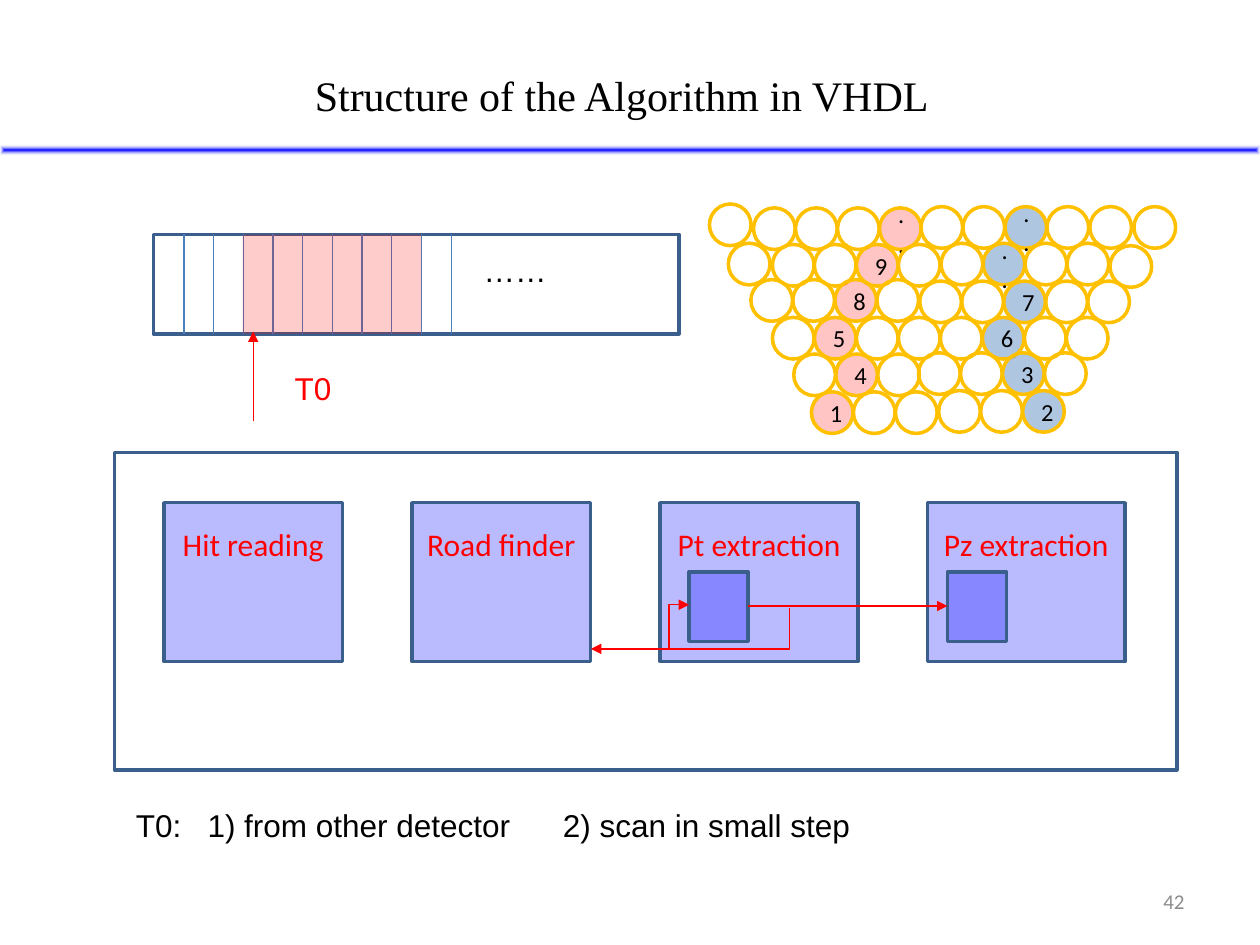
from lxml.etree import SubElement
from pptx import Presentation
from pptx.dml.color import RGBColor
from pptx.enum.shapes import MSO_CONNECTOR, MSO_SHAPE
from pptx.enum.text import MSO_ANCHOR, PP_ALIGN
from pptx.oxml import parse_xml
from pptx.oxml.ns import nsdecls, qn
from pptx.util import Pt

BLACK = RGBColor(0, 0, 0)
RED = RGBColor(0xFF, 0, 0)
BLUE = RGBColor(0, 0, 0xFF)
STEEL = RGBColor(0x4F, 0x81, 0xBD)
FRAME = RGBColor(0x3A, 0x5F, 0x8C)
DIVIDER = RGBColor(0x4B, 0x7E, 0xBC)
GOLD = RGBColor(0xFF, 0xC0, 0)
GREY = RGBColor(0x8C, 0x8C, 0x8C)

# text, left, top, width, height, font, size, colour
LABELS = [
    ("Structure of the Algorithm in VHDL", 172.8, 36, 380, 36, "Times New Roman", 24, BLACK),
    ("T0", 161.3, 207.4, 44, 29, "Arial", 18, RED),
    ("……", 269.3, 139.7, 60, 29, "Arial", 18, BLACK),
    ("T0:\t1) from other detector\t2) scan in small step", 70.6, 457.2, 460, 29, "Arial", 18, BLACK),
]
NOTE_TABS = (40.9, 244)
PAGE_NUMBER = ("42", 516.2, 500.4, 167.8, 28.8, "Calibri", 12, GREY)

# name, left, width
STAGES = [
    ("Hit reading", 93.6, 102.2),
    ("Road finder", 235.4, 102.2),
    ("Pt extraction", 377.3, 113),
    ("Pz extraction", 529.9, 113),
]
STAGE_TOP, STAGE_HEIGHT = 287.3, 90.7
INNER_LEFTS = (393.8, 541.4)

BUFFER = (87.8, 133.9, 300.2, 56.9)
DIVIDER_FIRST, DIVIDER_STEP, DIVIDER_COUNT = 105.1, 16.97, 10
WINDOW = (138.6, 133.9, 102.2, 56.9)

# Runs of straw tubes: left, top, cells. "-" is empty, r and b mark the two tracks.
TUBE_RUNS = [
    (405.4, 116.6, "-"), (430.6, 118.8, "- - - r.."),
    (526.3, 118.1, "- - b.. -"), (622.8, 118.1, "-"), (648, 118.1, "-"),
    (416.2, 139, "-"), (441.4, 139.7, "- - r9 -"),
    (537.8, 139, "- b.. - -"), (634.3, 140.4, "-"),
    (429.1, 159.8, "- - r8 -"), (525.6, 160.6, "- - b7 - -"),
    (441.4, 181.4, "- r5 - - - b6 - -"),
    (453.6, 202.3, "- r4 -"), (524.9, 201.6, "- - b3 -"),
    (463.7, 223.9, "r1 - -"), (536.4, 223.2, "- - b2"),
]
TUBE_FILLS = {"-": (None, None), "r": (RED, 23), "b": (STEEL, 45)}
TUBE_SIZE, TUBE_PITCH = 23.8, 24


def write(shape, text, font, size, colour, align=PP_ALIGN.LEFT):
    frame = shape.text_frame
    frame.word_wrap = True
    frame.text = text
    para = frame.paragraphs[0]
    para.alignment = align
    para.font.name = font
    para.font.size = Pt(size)
    for span in para.runs:
        span.font.name = font
        span.font.size = Pt(size)
        span.font.color.rgb = colour
    return frame


def add_label(page, text, left, top, width, height, *style):
    box = page.shapes.add_textbox(Pt(left), Pt(top), Pt(width), Pt(height))
    return write(box, text, *style)


def add_figure(page, kind, area, fill=None, opacity=None, line=None):
    """Add a preset shape; opacity is a percentage."""
    shape = page.shapes.add_shape(kind, *(Pt(length) for length in area))
    shape.shadow.inherit = False
    if fill is None:
        shape.fill.background()
    else:
        shape.fill.solid()
        shape.fill.fore_color.rgb = fill
        colour = shape.fill._xPr.find(qn("a:solidFill"))[0]
        SubElement(colour, qn("a:alpha")).set("val", str(opacity * 1000))
    if line is None:
        shape.line.fill.background()
    else:
        shape.line.color.rgb = line
        shape.line.width = Pt(2)
    return shape


def add_line(page, start, end, colour, arrow=False, bend=None):
    """Add a line; bend places the elbow, in thousandths of a percent of its width."""
    kind = MSO_CONNECTOR.STRAIGHT if bend is None else MSO_CONNECTOR.ELBOW
    line = page.shapes.add_connector(kind, *(Pt(length) for length in start + end))
    line.line.color.rgb = colour
    line.line.width = Pt(0.75)
    properties = line._element.spPr
    if arrow:
        SubElement(line.line._get_or_add_ln(), qn("a:tailEnd")).set("type", "triangle")
    if bend is not None:
        values = properties.find(qn("a:prstGeom")).find(qn("a:avLst"))
        guide = SubElement(values, qn("a:gd"))
        guide.set("name", "adj1")
        guide.set("fmla", f"val {bend}")
    SubElement(properties, qn("a:effectLst"))


def add_title_rule(page):
    rule = add_figure(page, MSO_SHAPE.RECTANGLE, (0, 82.8, 720, 5.8))
    gradient = parse_xml(
        f'<a:gradFill {nsdecls("a")} rotWithShape="1"><a:gsLst>'
        '<a:gs pos="0"><a:srgbClr val="0000FF"/></a:gs>'
        '<a:gs pos="100000"><a:srgbClr val="FFFFFF"><a:alpha val="0"/></a:srgbClr></a:gs>'
        '</a:gsLst><a:path path="shape">'
        '<a:fillToRect l="50000" t="50000" r="50000" b="50000"/></a:path></a:gradFill>')
    properties = rule._element.spPr
    properties.replace(properties.find(qn("a:noFill")), gradient)


def add_buffer(page):
    add_figure(page, MSO_SHAPE.RECTANGLE, BUFFER, line=FRAME)
    top, bottom = BUFFER[1], BUFFER[1] + BUFFER[3]
    for index in range(DIVIDER_COUNT):
        x = DIVIDER_FIRST + index * DIVIDER_STEP
        add_line(page, (x, top), (x, bottom), DIVIDER)
    add_line(page, (144.7, 240.5), (144.7, 189.4), RED, arrow=True)
    add_figure(page, MSO_SHAPE.RECTANGLE, WINDOW, RED, 20)


def add_stages(page):
    for name, left, width in STAGES:
        area = (left, STAGE_TOP, width, STAGE_HEIGHT)
        stage = add_figure(page, MSO_SHAPE.RECTANGLE, area, BLUE, 27, FRAME)
        frame = write(stage, name, "Calibri", 18, RED, PP_ALIGN.CENTER)
        frame.vertical_anchor = MSO_ANCHOR.TOP
        frame.margin_top = Pt(13)
    for left in INNER_LEFTS:
        add_figure(page, MSO_SHAPE.RECTANGLE, (left, 326.9, 33.8, 39.6), BLUE, 27, FRAME)
    add_line(page, (427.7, 346.3), (541.4, 346.3), RED, arrow=True)
    add_line(page, (450.7, 347.8), (337.7, 370.8), RED, arrow=True, bend=-500)
    add_line(page, (382.3, 371.5), (393.8, 345.6), RED, arrow=True, bend=0)
    add_figure(page, MSO_SHAPE.RECTANGLE, (65.5, 258.5, 607, 181.4), line=FRAME)


def add_tubes(page):
    for left, top, cells in TUBE_RUNS:
        for index, cell in enumerate(cells.split()):
            area = (left + index * TUBE_PITCH, top, TUBE_SIZE, TUBE_SIZE)
            tube = add_figure(page, MSO_SHAPE.OVAL, area, *TUBE_FILLS[cell[0]], GOLD)
            if cell != "-":
                frame = write(tube, cell[1:], "Calibri", 14, BLACK, PP_ALIGN.CENTER)
                frame.vertical_anchor = MSO_ANCHOR.MIDDLE


def main():
    deck = Presentation()
    deck.slide_width, deck.slide_height = Pt(720), Pt(540)
    page = deck.slides.add_slide(deck.slide_layouts[6])
    add_title_rule(page)
    add_buffer(page)
    add_stages(page)
    for label in LABELS:
        frame = add_label(page, *label)
    tabs = SubElement(frame.paragraphs[0]._p.get_or_add_pPr(), qn("a:tabLst"))
    tabs.getparent().insert(0, tabs)
    for position in NOTE_TABS:
        tab = SubElement(tabs, qn("a:tab"))
        tab.set("pos", str(Pt(position)))
        tab.set("algn", "l")
    number = add_label(page, *PAGE_NUMBER, PP_ALIGN.RIGHT)
    number.vertical_anchor = MSO_ANCHOR.MIDDLE
    add_tubes(page)
    deck.save("out.pptx")


if __name__ == "__main__":
    main()
